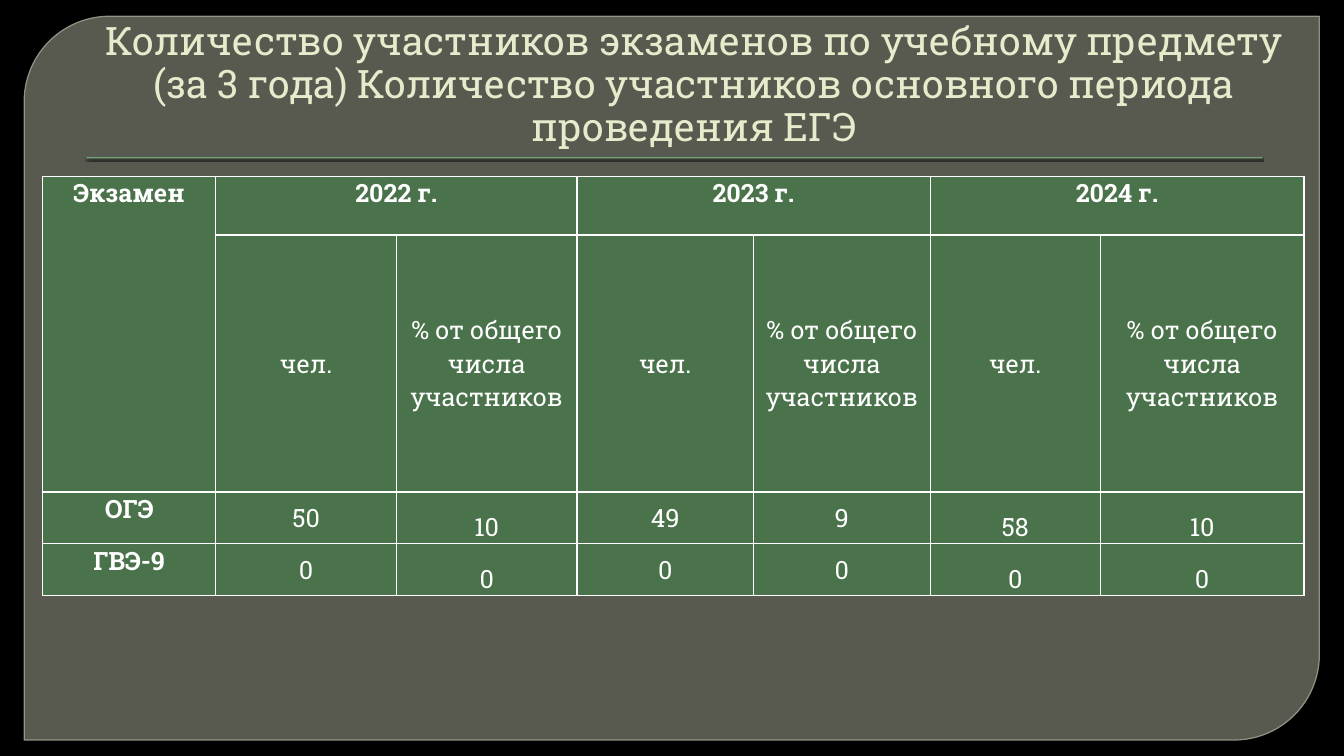
import pptx
import pptx.util
import pptx.dml.color
import pptx.enum.shapes
import pptx.enum.text
import pptx.oxml
from pptx.oxml.ns import nsdecls, qn

Cm = pptx.util.Cm
Pt = pptx.util.Pt
ANCHOR = pptx.enum.text.MSO_ANCHOR
SHAPE = pptx.enum.shapes.MSO_SHAPE

FONT = "Roboto Slab"
COLORS = {
    "background": "000000",
    "panel": "888B7B",
    "panel_edge": "9DA090",
    "rule": "72A376",
    "title": "E7EACB",
    "cell": "4B734B",
    "white": "FFFFFF",
}
TITLE = ("Количество участников экзаменов по учебному предмету (за 3 года) "
         "Количество участников основного периода проведения ЕГЭ")
YEARS = ["2022 г.", "2023 г.", "2024 г."]
MEASURES = ["чел.", "% от общего числа участников"]
EXAMS = [
    ["ОГЭ", "50", "10", "49", "9", "58", "10"],
    ["ГВЭ-9", "0", "0", "0", "0", "0", "0"],
]
COLUMN_WIDTHS = [4.37, 4.55, 4.55, 4.45, 4.45, 4.29, 5.13]
ROW_HEIGHTS = [1.47, 6.48, 1.3, 1.3]
VALUE_ANCHORS = [ANCHOR.TOP, ANCHOR.MIDDLE, ANCHOR.BOTTOM, ANCHOR.MIDDLE,
                 ANCHOR.MIDDLE, ANCHOR.BOTTOM, ANCHOR.BOTTOM]


def rgb(name):
    return pptx.dml.color.RGBColor.from_string(COLORS[name])


def set_alpha(fill_format, percent):
    color = fill_format._xPr.find(qn("a:solidFill"))[0]
    color.append(pptx.oxml.parse_xml(
        f'<a:alpha {nsdecls("a")} val="{percent * 1000}"/>'))


def write(paragraph, text, size, color, bold=False):
    paragraph.alignment = pptx.enum.text.PP_ALIGN.CENTER
    run = paragraph.add_run()
    run.text = text
    run.font.name = FONT
    run.font.size = Pt(size)
    run.font.bold = bold
    run.font.color.rgb = rgb(color)


def add_panel(slide, left, top, width, height):
    panel = slide.shapes.add_shape(SHAPE.ROUND_2_DIAG_RECTANGLE,
                                   Cm(left), Cm(top), Cm(width), Cm(height))
    panel.shadow.inherit = False
    panel.adjustments[0] = 0.118
    panel.adjustments[1] = 0
    panel.fill.solid()
    panel.fill.fore_color.rgb = rgb("panel")
    set_alpha(panel.fill, 65)
    panel.line.width = Pt(0.87)
    panel.line.color.rgb = rgb("panel_edge")
    set_alpha(panel.line.fill, 88)


def add_title(slide, left, top, width, height):
    title = slide.shapes.add_textbox(Cm(left), Cm(top), Cm(width), Cm(height))
    frame = title.text_frame
    frame.word_wrap = True
    frame.vertical_anchor = ANCHOR.BOTTOM
    frame.margin_top = frame.margin_bottom = 0
    heading = frame.paragraphs[0]
    heading.line_spacing = 0.91
    write(heading, TITLE, 28, "title")

    rule = slide.shapes.add_shape(SHAPE.RECTANGLE, Cm(left + 0.43),
                                  Cm(top + height + 0.18), Cm(29.64), Cm(0.03))
    rule.fill.solid()
    rule.fill.fore_color.rgb = rgb("rule")
    rule.line.fill.background()
    rule._element.spPr.append(pptx.oxml.parse_xml(
        f'<a:effectLst {nsdecls("a")}>'
        '<a:outerShdw blurRad="12700" dist="12700" dir="5400000">'
        '<a:srgbClr val="000000"><a:alpha val="75000"/></a:srgbClr>'
        '</a:outerShdw></a:effectLst>'))


def style_cell(cell):
    cell.margin_left = cell.margin_right = Cm(0.16)
    cell.margin_top = cell.margin_bottom = 0
    properties = cell._tc.get_or_add_tcPr()
    for side in ("lnL", "lnR", "lnT", "lnB"):
        properties.append(pptx.oxml.parse_xml(
            f'<a:{side} {nsdecls("a")} w="12700"><a:solidFill>'
            f'<a:srgbClr val="{COLORS["white"]}"/></a:solidFill></a:{side}>'))
    cell.fill.solid()
    cell.fill.fore_color.rgb = rgb("cell")


def fill_cell(cell, text, anchor, bold=False):
    cell.vertical_anchor = anchor
    write(cell.text_frame.paragraphs[0], text, 18, "white", bold)


def add_exam_table(slide, left, top):
    table = slide.shapes.add_table(
        len(ROW_HEIGHTS), len(COLUMN_WIDTHS), Cm(left), Cm(top),
        Cm(sum(COLUMN_WIDTHS)), Cm(sum(ROW_HEIGHTS))).table
    table.first_row = table.horz_banding = False
    for column, width in zip(table.columns, COLUMN_WIDTHS):
        column.width = Cm(width)
    for row, height in zip(table.rows, ROW_HEIGHTS):
        row.height = Cm(height)
    for cell in table.iter_cells():
        style_cell(cell)

    table.cell(0, 0).merge(table.cell(1, 0))
    fill_cell(table.cell(0, 0), "Экзамен", ANCHOR.TOP, True)
    for i, year in enumerate(YEARS):
        first = 1 + i * len(MEASURES)
        table.cell(0, first).merge(table.cell(0, first + 1))
        fill_cell(table.cell(0, first), year, ANCHOR.TOP, True)
        for j, measure in enumerate(MEASURES):
            fill_cell(table.cell(1, first + j), measure, ANCHOR.MIDDLE)
    for r, exam in enumerate(EXAMS, start=2):
        for c, (value, anchor) in enumerate(zip(exam, VALUE_ANCHORS)):
            fill_cell(table.cell(r, c), value, anchor, c == 0)


def main():
    deck = pptx.Presentation()
    deck.slide_width = Cm(33.87)
    deck.slide_height = Cm(19.05)
    slide = deck.slides.add_slide(deck.slide_layouts[6])
    slide.background.fill.solid()
    slide.background.fill.fore_color.rgb = rgb("background")
    add_panel(slide, 0.61, 0.41, 32.64, 18.24)
    add_title(slide, 1.75, 0.2, 31.47, 3.58)
    add_exam_table(slide, 1.07, 4.45)
    deck.save("out.pptx")


if __name__ == "__main__":
    main()
